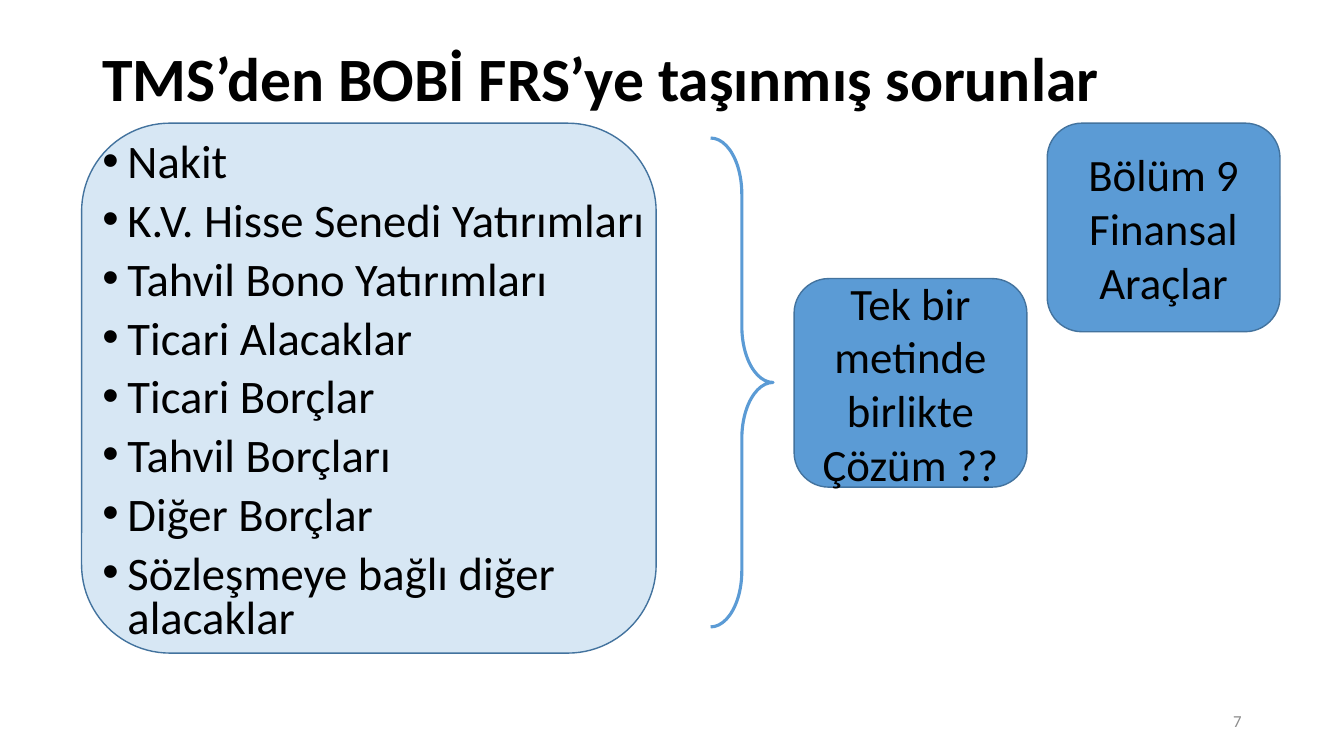
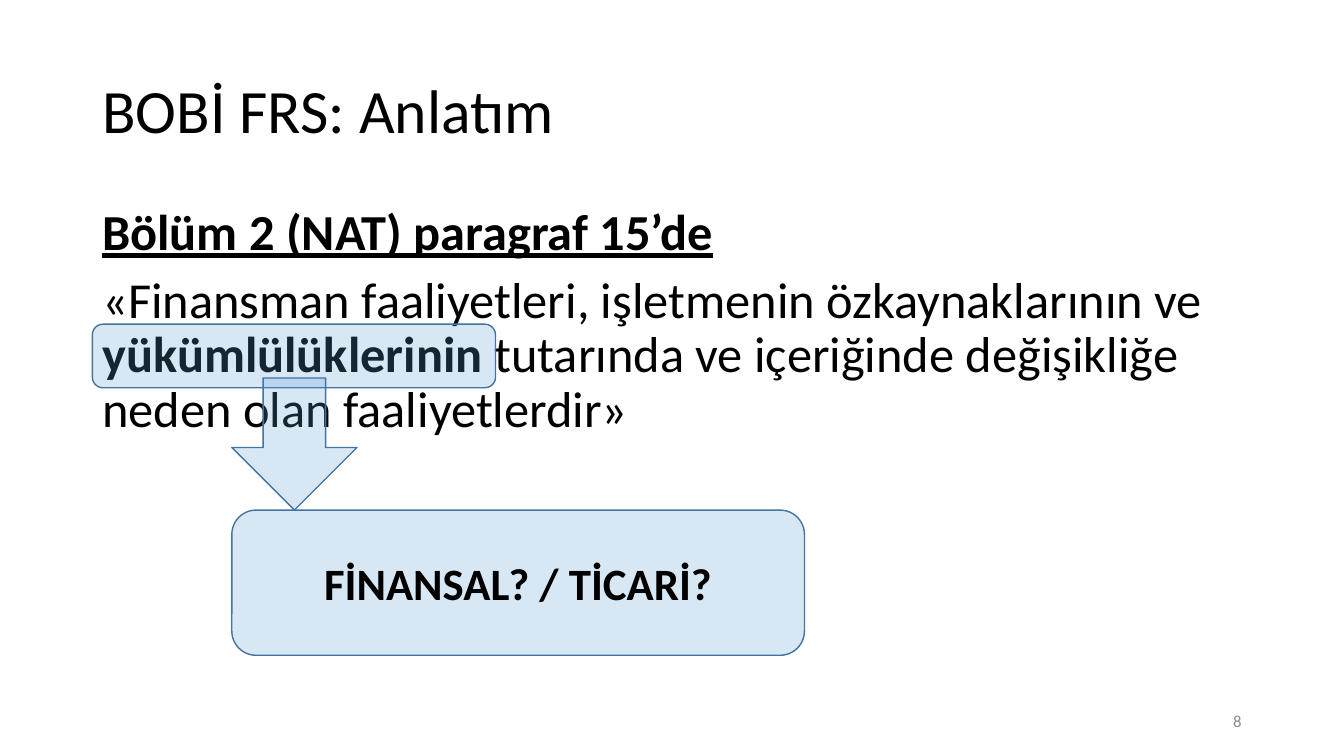
from lxml.etree import SubElement
from pptx import Presentation
from pptx.dml.color import RGBColor
from pptx.enum.shapes import MSO_SHAPE
from pptx.enum.text import MSO_ANCHOR, MSO_AUTO_SIZE, PP_ALIGN
from pptx.oxml.ns import qn
from pptx.util import Pt

FONT = "Calibri"
COLORS = {"text": "000000", "blue": "5B9BD5", "edge": "43739E", "gray": "8C8C8C"}
LEFT, WIDTH = 66, 828
TINT = 24  # opacity of pale shapes, in percent


def color(name):
    return RGBColor.from_string(COLORS[name])


def place(shape, box):
    shape.left, shape.top, shape.width, shape.height = map(Pt, box)


def style(frame, size, tone="text", bold=False, align=PP_ALIGN.LEFT):
    for para in frame.paragraphs:
        para.alignment = align
        for run in para.runs:
            font = run.font
            font.name, font.size, font.bold = FONT, Pt(size), bold
            font.color.rgb = color(tone)


# Title and page number shared by all slides
def add_slide(prs, title, height, page, bold=False):
    slide = prs.slides.add_slide(prs.slide_layouts[5])
    head = slide.shapes.title
    place(head, (LEFT, 28.8, WIDTH, height))
    frame = head.text_frame
    frame.text = title
    frame.auto_size = MSO_AUTO_SIZE.NONE
    frame.vertical_anchor = MSO_ANCHOR.MIDDLE
    frame.paragraphs[0].line_spacing = 0.9
    style(frame, 44, bold=bold)
    foot = add_text(slide, (678, 500.4, 216, 28.8), [str(page)])
    foot.vertical_anchor = MSO_ANCHOR.MIDDLE
    style(foot, 12, "gray", align=PP_ALIGN.RIGHT)
    return slide


def add_text(slide, box, lines):
    frame = slide.shapes.add_textbox(*map(Pt, box)).text_frame
    frame.word_wrap = True
    frame.text = "\n".join(lines)
    return frame


def space(frame, ratio):
    for para in frame.paragraphs:
        para.line_spacing = ratio
        para.space_before = Pt(10)


def add_bullets(frame, indent):
    for para in frame.paragraphs:
        props = para._p.get_or_add_pPr()
        props.set("marL", str(Pt(indent)))
        props.set("indent", str(-Pt(indent)))
        SubElement(props, qn("a:buFont"), typeface="Arial")
        SubElement(props, qn("a:buChar"), char="•")


# Blue shape, pale when an opacity is given, with an optional label
def add_block(slide, kind, box, text="", opacity=100, bold=False):
    shape = slide.shapes.add_shape(kind, *map(Pt, box))
    shape.shadow.inherit = False
    shape.fill.solid()
    shape.fill.fore_color.rgb = color("blue")
    if opacity < 100:
        tone = shape.fill._xPr.find(".//" + qn("a:srgbClr"))
        SubElement(tone, qn("a:alpha"), val=str(opacity * 1000))
    shape.line.color.rgb = color("edge")
    shape.line.width = Pt(1)
    if text:
        frame = shape.text_frame
        frame.text = text
        frame.word_wrap = True
        frame.vertical_anchor = MSO_ANCHOR.MIDDLE
        style(frame, 32, bold=bold, align=PP_ALIGN.CENTER)


def add_brace(slide, box):
    brace = slide.shapes.add_shape(MSO_SHAPE.RIGHT_BRACE, *map(Pt, box))
    brace.shadow.inherit = False
    brace.fill.background()
    brace.line.color.rgb = color("blue")
    brace.line.width = Pt(2.25)
    brace.adjustments[0], brace.adjustments[1] = 0.9, 0.5


def add_issues(prs):
    slide = add_slide(prs, "TMS’den BOBİ FRS’ye taşınmış sorunlar", 59, 7, bold=True)
    rounded = MSO_SHAPE.ROUNDED_RECTANGLE
    add_block(slide, rounded, (58.3, 88, 410.4, 378.5), opacity=TINT)
    items = add_text(slide, (LEFT, 98.6, 441.4, 387.4), [
        "Nakit", "K.V. Hisse Senedi Yatırımları", "Tahvil Bono Yatırımları",
        "Ticari Alacaklar", "Ticari Borçlar", "Tahvil Borçları",
        "Diğer Borçlar", "Sözleşmeye bağlı diğer alacaklar"])
    style(items, 33.3)
    space(items, 0.8)
    add_bullets(items, 18)
    add_brace(slide, (507.6, 98.6, 44.6, 349.2))
    size = (166.3, 149)
    add_block(slide, rounded, (567.2, 199, *size), "Tek bir metinde birlikte\nÇözüm ??")
    add_block(slide, rounded, (748, 88, *size), "Bölüm 9 Finansal Araçlar")


def add_quote(prs):
    slide = add_slide(prs, "BOBİ FRS: Anlatım", 104.4, 8)
    body = add_text(slide, (LEFT, 144, WIDTH, 342.7), [
        "Bölüm 2 (NAT) paragraf 15’de",
        "«Finansman faaliyetleri, işletmenin özkaynaklarının ve "])
    head, quote = body.paragraphs
    for part in ("yükümlülüklerinin ",
                 "tutarında ve içeriğinde değişikliğe neden olan faaliyetlerdir»"):
        quote.add_run().text = part
    style(body, 36)
    space(body, 0.9)
    head.runs[0].font.bold = head.runs[0].font.underline = True
    quote.runs[1].font.bold = True

    # Marked word, arrow and question
    rounded, left, top = MSO_SHAPE.ROUNDED_RECTANGLE, 165.6, 364.4
    add_block(slide, rounded, (LEFT, 231.6, 288, 45.4), opacity=TINT)
    add_block(slide, MSO_SHAPE.DOWN_ARROW, (left, 270, 89.4, top - 270), opacity=TINT)
    add_block(slide, rounded, (left, top, 409, 103.7), "FİNANSAL? / TİCARİ?", TINT, True)


def main():
    prs = Presentation()
    prs.slide_width, prs.slide_height = Pt(960), Pt(540)
    add_issues(prs)
    add_quote(prs)
    prs.save("out.pptx")


if __name__ == "__main__":
    main()
